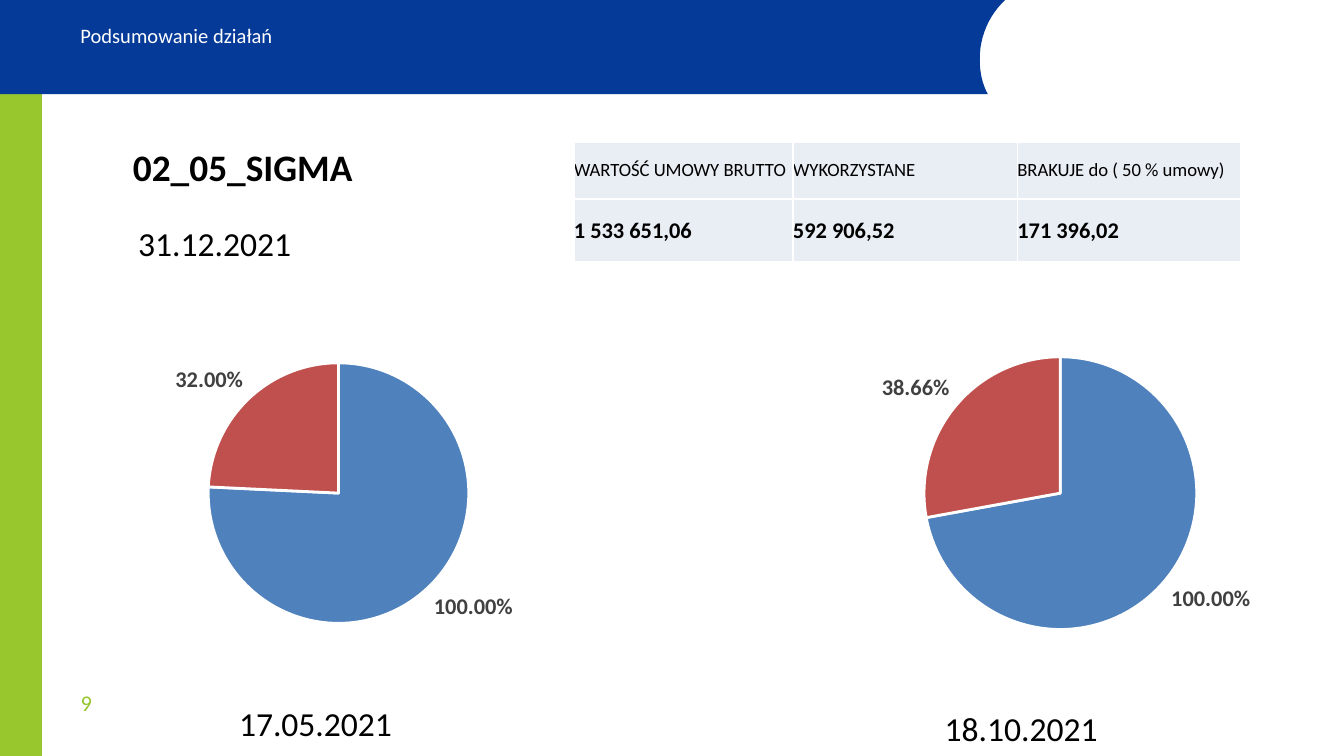
from lxml import etree
from pptx import Presentation
from pptx.chart.data import CategoryChartData
from pptx.dml.color import RGBColor
from pptx.enum.chart import XL_CHART_TYPE, XL_LABEL_POSITION
from pptx.enum.text import MSO_ANCHOR
from pptx.oxml import parse_xml
from pptx.oxml.ns import nsdecls, qn
from pptx.util import Inches, Pt

PIE = XL_CHART_TYPE.PIE
OUTSIDE_END = XL_LABEL_POSITION.OUTSIDE_END
MIDDLE = MSO_ANCHOR.MIDDLE

WIDTH = 10
HEIGHT = WIDTH * 9 / 16
FONT = "Calibri"
BLUE, GREEN, WHITE, BLACK = "053A98", "97C72C", "FFFFFF", "000000"
CELL_FILL, LABEL_GRAY = "E9EDF4", "404040"
SLICE_COLORS = ["4F81BD", "C0504D"]

BAND_HEIGHT, SIDEBAR_TOP, SIDEBAR_WIDTH = 0.7, 0.35, 0.31
BAND_CURVES = [
    [(7.35, 0.7), (7.31, 0.63), (7.29, 0.54), (7.29, 0.44)],
    [(7.29, 0.44), (7.29, 0.27), (7.36, 0.11), (7.48, 0)],
]
CURVE_STEPS = 12

TEXTS = [
    ("Podsumowanie działań", (0.5, 0.12, 6.43, 0.28), 11, WHITE, False, True),
    ("02_05_SIGMA", (0.89, 1.02, 1.85, 0.44), 20, BLACK, True, False),
    ("31.12.2021", (0.93, 1.61, 1.35, 0.4), 18, BLACK, False, False),
    ("17.05.2021", (1.68, 5.18, 1.35, 0.4), 18, BLACK, False, False),
    ("18.10.2021", (6.93, 5.22, 1.35, 0.4), 18, BLACK, False, False),
]
PAGE_NUMBER = ("9", (0.6, 4.91, 0.56, 0.43), 12, GREEN, False, True)

TABLE_LEFT, TABLE_TOP = 4.27, 1.06
COLUMN_WIDTHS = [1.63, 1.67, 1.66]
ROWS = [
    (0.42, 10, False, ["WARTOŚĆ UMOWY BRUTTO", "WYKORZYSTANE", "BRAKUJE do ( 50 % umowy)"]),
    (0.47, 12, True, ["1 533 651,06", "592 906,52", "171 396,02"]),
]

CHARTS = [
    {"values": (1, 0.32), "box": (0.5, 2.46, 3.99, 2.61), "center": (2.52, 3.67), "diameter": 1.94},
    {"values": (1, 0.3866), "box": (5.84, 2.47, 4.06, 2.6), "center": (7.89, 3.67), "diameter": 2.03},
]


def color(value):
    return RGBColor.from_string(value)


def set_font(font, size, value, bold=False):
    font.name, font.size, font.bold = FONT, Pt(size), bold
    font.color.rgb = color(value)


def curve_points(start, first, second, end):
    for step in range(CURVE_STEPS + 1):
        t = step / CURVE_STEPS
        weights = ((1 - t) ** 3, 3 * t * (1 - t) ** 2, 3 * t * t * (1 - t), t ** 3)
        yield tuple(
            sum(weight * place for weight, place in zip(weights, axis))
            for axis in zip(start, first, second, end)
        )


def add_outline(slide, points, fill):
    corners = [(Inches(x), Inches(y)) for x, y in points]
    builder = slide.shapes.build_freeform(*corners[0])
    builder.add_line_segments(corners[1:])
    shape = builder.convert_to_shape()
    shape.shadow.inherit = False
    shape.fill.solid()
    shape.fill.fore_color.rgb = color(fill)
    shape.line.fill.background()


def add_text(slide, text, box, size, value, bold, wrap):
    shape = slide.shapes.add_textbox(*map(Inches, box))
    frame = shape.text_frame
    frame.word_wrap = wrap
    frame.text = text
    set_font(frame.paragraphs[0].font, size, value, bold)
    return frame


def add_borders(cell):
    properties = cell._tc.get_or_add_tcPr()
    for position, side in enumerate(("lnL", "lnR", "lnT", "lnB")):
        properties.insert(position, parse_xml(
            f'<a:{side} {nsdecls("a")} w="12700"><a:solidFill>'
            f'<a:srgbClr val="{WHITE}"/></a:solidFill></a:{side}>'))


def add_summary_table(slide):
    heights = [row[0] for row in ROWS]
    box = (TABLE_LEFT, TABLE_TOP, sum(COLUMN_WIDTHS), sum(heights))
    table = slide.shapes.add_table(len(ROWS), len(COLUMN_WIDTHS), *map(Inches, box)).table
    for column, width in zip(table.columns, COLUMN_WIDTHS):
        column.width = Inches(width)
    for row, (height, size, bold, texts) in zip(table.rows, ROWS):
        row.height = Inches(height)
        for cell, text in zip(row.cells, texts):
            cell.text = text
            cell.vertical_anchor = MIDDLE
            cell.margin_left = cell.margin_right = cell.margin_top = cell.margin_bottom = 0
            cell.fill.solid()
            cell.fill.fore_color.rgb = color(CELL_FILL)
            set_font(cell.text_frame.paragraphs[0].font, size, BLACK, bold)
            add_borders(cell)


def place_pie(chart, box, center, diameter):
    left, top, width, height = box
    shares = {
        "x": (center[0] - diameter / 2 - left) / width,
        "y": (center[1] - diameter / 2 - top) / height,
        "w": diameter / width,
        "h": diameter / height,
    }
    layout = etree.Element(qn("c:layout"))
    manual = etree.SubElement(layout, qn("c:manualLayout"))
    settings = {"layoutTarget": "inner", "xMode": "edge", "yMode": "edge"}
    settings.update((name, f"{share:.3f}") for name, share in shares.items())
    for name, value in settings.items():
        etree.SubElement(manual, qn(f"c:{name}")).set("val", value)
    chart._chartSpace.chart.plotArea.insert(0, layout)


def add_pie(slide, values, box, center, diameter):
    data = CategoryChartData(number_format="0.00%")
    data.categories = ["1", "2"]
    data.add_series("Series 1", values)
    chart = slide.shapes.add_chart(PIE, *map(Inches, box), data).chart
    chart.has_title = chart.has_legend = False
    set_font(chart.font, 10, BLACK)
    plot = chart.plots[0]
    plot.vary_by_categories = True
    for index, value in enumerate(SLICE_COLORS):
        slice_format = plot.series[0].points[index].format
        slice_format.fill.solid()
        slice_format.fill.fore_color.rgb = color(value)
        slice_format.line.color.rgb = color(WHITE)
        slice_format.line.width = Pt(1.5)
    labels = plot.series[0].data_labels
    labels.show_value = True
    labels.show_percentage = False
    labels.position = OUTSIDE_END
    labels.number_format = "0.00%"
    labels.number_format_is_linked = False
    set_font(labels.font, 12, LABEL_GRAY, True)
    place_pie(chart, box, center, diameter)


def main():
    """Build the contract summary slide and save it."""
    presentation = Presentation()
    presentation.slide_width, presentation.slide_height = Inches(WIDTH), Inches(HEIGHT)
    slide = presentation.slides.add_slide(presentation.slide_layouts[6])

    sidebar = [(0, SIDEBAR_TOP), (SIDEBAR_WIDTH, SIDEBAR_TOP), (SIDEBAR_WIDTH, HEIGHT), (0, HEIGHT)]
    add_outline(slide, sidebar, GREEN)
    edge = [point for curve in BAND_CURVES for point in curve_points(*curve)]
    add_outline(slide, [(0, 0), (0, BAND_HEIGHT), *edge], BLUE)

    number_frame = add_text(slide, *PAGE_NUMBER)
    number_frame.margin_left = number_frame.margin_right = number_frame.margin_top = 0
    number_frame.paragraphs[0].line_spacing = Pt(30)
    for text in TEXTS:
        add_text(slide, *text)
    add_summary_table(slide)
    for chart in CHARTS:
        add_pie(slide, **chart)
    presentation.save("out.pptx")


if __name__ == "__main__":
    main()
